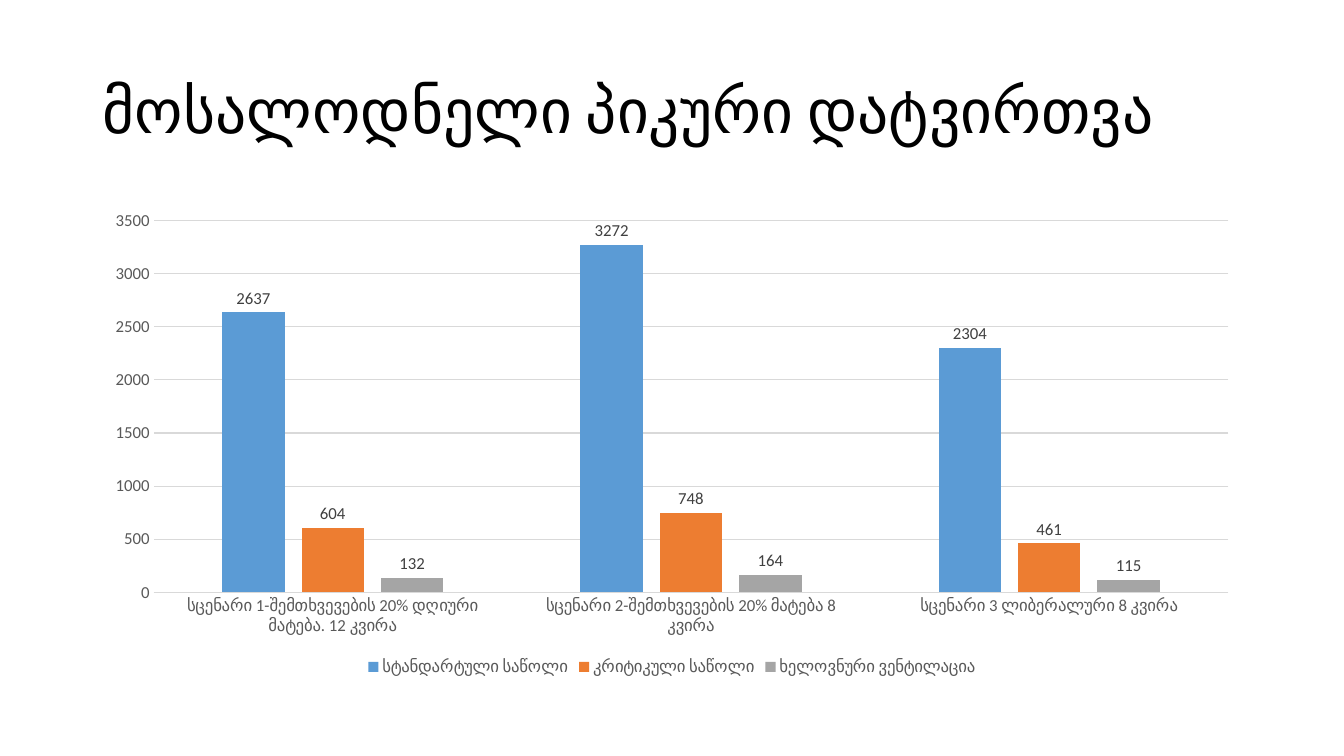
from dataclasses import dataclass

from pptx import Presentation
from pptx.chart.data import CategoryChartData
from pptx.dml.color import RGBColor
from pptx.enum import chart as charts, text
from pptx.util import Cm, Pt


@dataclass(frozen=True)
class Theme:
    font: str = "Calibri"
    ink: str = "000000"
    axis_text: str = "595959"
    value_text: str = "404040"
    rule: str = "D9D9D9"
    title_size: float = 44
    chart_size: float = 12
    rule_width: float = 0.75


@dataclass(frozen=True)
class BedType:
    name: str
    peaks: tuple[int, ...]
    color: str


THEME = Theme()
LEFT, WIDTH = Cm(2.33), Cm(29.21)
SCENARIOS = (
    "სცენარი 1-შემთხვევების 20% დღიური მატება. 12 კვირა",
    "სცენარი 2-შემთხვევების 20% მატება 8 კვირა",
    "სცენარი 3 ლიბერალური 8 კვირა",
)
BED_TYPES = (
    BedType("სტანდარტული საწოლი", (2637, 3272, 2304), "5B9BD5"),
    BedType("კრიტიკული საწოლი", (604, 748, 461), "ED7D31"),
    BedType("ხელოვნური ვენტილაცია", (132, 164, 115), "A5A5A5"),
)


def style_font(font, *, size: float, color: str) -> None:
    font.name = THEME.font
    font.size = Pt(size)
    font.bold = False
    font.color.rgb = RGBColor.from_string(color)


def style_rule(line) -> None:
    """Give an axis line or gridline the thin grey stroke."""
    line.color.rgb = RGBColor.from_string(THEME.rule)
    line.width = Pt(THEME.rule_width)


def write_text(frame, wording: str, *, size: float, color: str,
               align=text.PP_ALIGN.LEFT, anchor=text.MSO_ANCHOR.MIDDLE,
               line_spacing: float = 0.9) -> None:
    frame.word_wrap = True
    frame.auto_size = text.MSO_AUTO_SIZE.NONE
    frame.vertical_anchor = anchor
    paragraph = frame.paragraphs[0]
    paragraph.alignment = align
    paragraph.line_spacing = line_spacing
    run = paragraph.add_run()
    run.text = wording
    style_font(run.font, size=size, color=color)


def add_heading(slide, wording: str) -> None:
    heading = slide.shapes.title
    heading.left, heading.top = LEFT, Cm(1.01)
    heading.width, heading.height = WIDTH, Cm(3.68)
    write_text(heading.text_frame, wording, size=THEME.title_size, color=THEME.ink)


def style_axes(chart) -> None:
    for axis in (chart.category_axis, chart.value_axis):
        axis.major_tick_mark = axis.minor_tick_mark = charts.XL_TICK_MARK.NONE
        style_font(axis.tick_labels.font, size=THEME.chart_size, color=THEME.axis_text)
    style_rule(chart.category_axis.format.line)
    peak_axis = chart.value_axis
    peak_axis.minimum_scale, peak_axis.maximum_scale = 0, 3500
    peak_axis.major_unit = 500
    peak_axis.format.line.fill.background()
    style_rule(peak_axis.major_gridlines.format.line)


def style_bars(plot) -> None:
    plot.gap_width, plot.overlap = 219, -27
    plot.vary_by_categories = False
    for series, bed in zip(plot.series, BED_TYPES):
        series.format.fill.solid()
        series.format.fill.fore_color.rgb = RGBColor.from_string(bed.color)
        series.invert_if_negative = False
        labels = series.data_labels
        labels.show_value = True
        labels.position = charts.XL_LABEL_POSITION.OUTSIDE_END
        style_font(labels.font, size=THEME.chart_size, color=THEME.value_text)


def add_peak_load_chart(slide) -> None:
    peak_load = CategoryChartData(number_format="General")
    peak_load.categories = SCENARIOS
    for bed in BED_TYPES:
        peak_load.add_series(bed.name, bed.peaks)
    chart = slide.shapes.add_chart(
        charts.XL_CHART_TYPE.COLUMN_CLUSTERED, LEFT, Cm(5.07), WIDTH, Cm(12.09), peak_load
    ).chart
    style_font(chart.font, size=THEME.chart_size, color=THEME.axis_text)
    chart.has_title = False
    chart.has_legend = True
    chart.legend.position = charts.XL_LEGEND_POSITION.BOTTOM
    chart.legend.include_in_layout = False
    style_font(chart.legend.font, size=THEME.chart_size, color=THEME.axis_text)
    style_axes(chart)
    style_bars(chart.plots[0])


def main() -> None:
    deck = Presentation()
    deck.slide_width, deck.slide_height = Cm(33.87), Cm(19.05)
    slide = deck.slides.add_slide(deck.slide_layouts.get_by_name("Title Only"))
    add_heading(slide, "მოსალოდნელი პიკური დატვირთვა")
    add_peak_load_chart(slide)
    deck.save("out.pptx")


if __name__ == "__main__":
    main()
